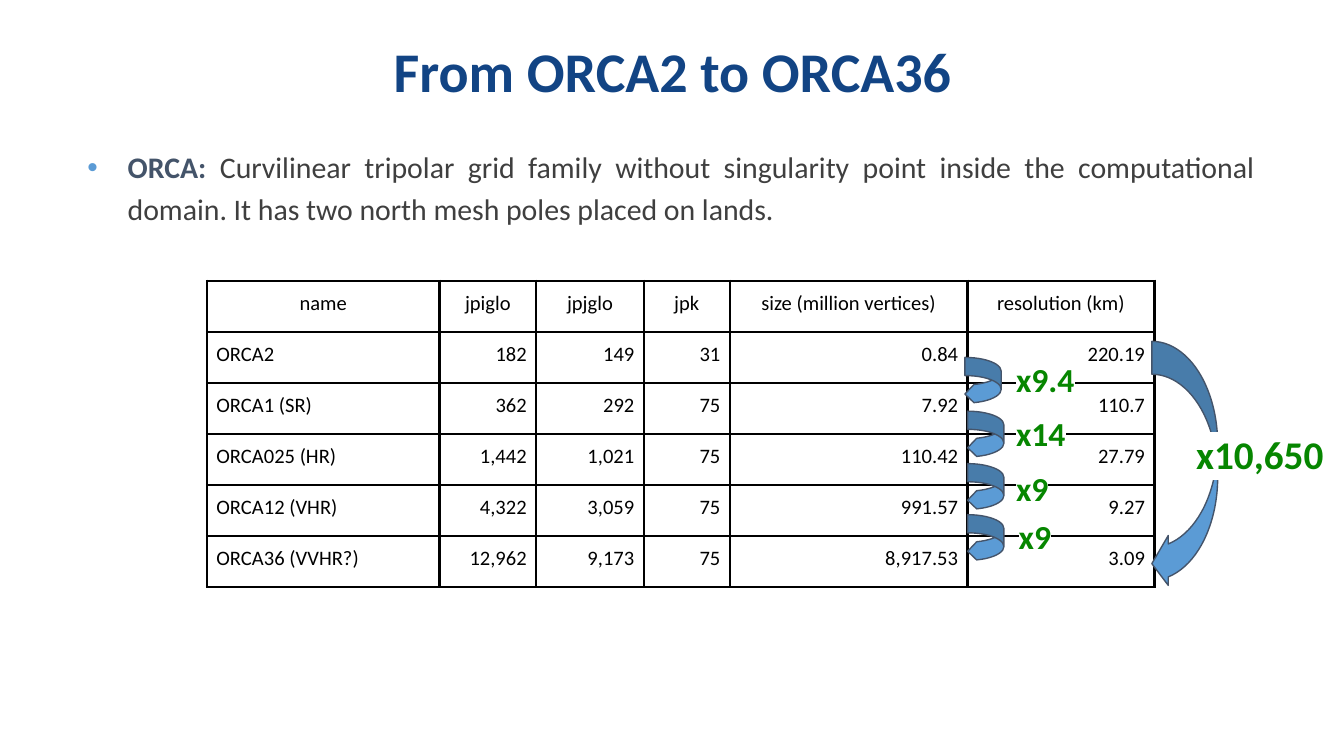
from lxml import etree
from pptx import Presentation
from pptx.dml.color import RGBColor
from pptx.enum.shapes import MSO_SHAPE
from pptx.enum.text import MSO_ANCHOR, MSO_AUTO_SIZE, PP_ALIGN
from pptx.oxml.ns import qn
from pptx.util import Inches, Pt

LEFT, CENTER, RIGHT = PP_ALIGN.LEFT, PP_ALIGN.CENTER, PP_ALIGN.RIGHT
JUSTIFY = PP_ALIGN.JUSTIFY
TOP, MIDDLE = MSO_ANCHOR.TOP, MSO_ANCHOR.MIDDLE
NO_AUTOSIZE = MSO_AUTO_SIZE.NONE
CURVED_ARROW = MSO_SHAPE.CURVED_LEFT_ARROW

NAVY = RGBColor(0x12, 0x44, 0x84)
SLATE = RGBColor(0x44, 0x54, 0x6A)
GRAY = RGBColor(0x3F, 0x3F, 0x3F)
BLUE = RGBColor(0x5B, 0x9B, 0xD5)
GREEN = RGBColor(0x06, 0x86, 0x00)
BLACK = RGBColor(0x00, 0x00, 0x00)
WHITE = RGBColor(0xFF, 0xFF, 0xFF)

COLUMNS = 100  # square grid: 100 columns across the slide width

HEADER = ["name", "jpiglo", "jpjglo", "jpk", "size (million vertices)", "resolution (km)"]
GRIDS = [
    ["ORCA2", "182", "149", "31", "0.84", "220.19"],
    ["ORCA1 (SR)", "362", "292", "75", "7.92", "110.7"],
    ["ORCA025 (HR)", "1,442", "1,021", "75", "110.42", "27.79"],
    ["ORCA12 (VHR)", "4,322", "3,059", "75", "991.57", "9.27"],
    ["ORCA36 (VVHR?)", "12,962", "9,173", "75", "8,917.53", "3.09"],
]
COLUMN_WIDTHS = [17.3, 7.2, 8, 6.4, 17.7, 13.9]
ROW_HEIGHT = 3.8

# Arrow column and row, growth factor, label column and row
STEPS = [
    (71.8, 26.6, "x9.4", 74.9, 26),
    (72, 30.6, "x14", 74.9, 30),
    (72, 34.5, "x9", 74.9, 34.1),
    (72, 38.3, "x9", 75.1, 37.7),
]


def add_child(parent, tag, **attributes):
    return etree.SubElement(parent, qn(tag), attributes)


def add_color(parent, color):
    add_child(parent, "a:srgbClr", val=str(color))


class SlideBuilder:
    font_name = "Calibri"
    inset = Inches(0.07)

    def __init__(self, deck):
        self.unit = deck.slide_width / COLUMNS
        self.page = deck.slides.add_slide(deck.slide_layouts[5])

    def grid(self, *lengths):
        return [round(length * self.unit) for length in lengths]

    def set_frame(self, frame, anchor=TOP):
        frame.word_wrap = True
        frame.auto_size = NO_AUTOSIZE
        frame.vertical_anchor = anchor
        frame.margin_left = frame.margin_right = self.inset
        frame.margin_top = frame.margin_bottom = self.inset

    def add_run(self, para, text, size, color, bold=False, highlight=None):
        span = para.add_run()
        span.text = text
        font = span.font
        font.name, font.size, font.bold = self.font_name, Pt(size), bold
        font.color.rgb = color
        if highlight is not None:
            properties = span._r.get_or_add_rPr()
            mark = etree.Element(qn("a:highlight"))
            add_color(mark, highlight)
            properties.find(qn("a:solidFill")).addnext(mark)

    def title(self, text, *place):
        box = self.page.shapes.title
        box.left, box.top, box.width, box.height = self.grid(*place)
        self.set_frame(box.text_frame, MIDDLE)
        para = box.text_frame.paragraphs[0]
        para.alignment = CENTER
        self.add_run(para, text, 30, NAVY, bold=True)

    def text_box(self, *place):
        box = self.page.shapes.add_textbox(*self.grid(*place))
        self.set_frame(box.text_frame)
        return box.text_frame.paragraphs[0]

    def bullet(self, term, text, *place):
        para = self.text_box(*place)
        properties = para._p.get_or_add_pPr()
        properties.set("marL", str(Inches(0.36)))
        properties.set("indent", str(Inches(-0.3)))
        add_color(add_child(properties, "a:buClr"), BLUE)
        add_child(properties, "a:buFont", typeface="Arial")
        add_child(properties, "a:buChar", char="•")
        para.alignment, para.line_spacing = JUSTIFY, 1.15
        self.add_run(para, term, 16, SLATE, bold=True)
        self.add_run(para, text, 16, GRAY)

    def factor(self, text, size, *place):
        self.add_run(self.text_box(*place), text, size, GREEN, bold=True, highlight=WHITE)

    def arrow(self, bend, *place):
        shape = self.page.shapes.add_shape(CURVED_ARROW, *self.grid(*place))
        shape.shadow.inherit = False
        shape.fill.solid()
        shape.fill.fore_color.rgb = BLUE
        shape.line.color.rgb = SLATE
        shape.line.width = Pt(0.75)
        for index, value in enumerate((0.5, bend, 0.25)):
            shape.adjustments[index] = value

    def set_borders(self, cell):
        properties = cell._tc.get_or_add_tcPr()
        for index, side in enumerate(("a:lnL", "a:lnR", "a:lnT", "a:lnB")):
            line = etree.Element(qn(side), w=str(Pt(1.5)))
            add_color(add_child(line, "a:solidFill"), BLACK)
            properties.insert(index, line)

    def cell(self, cell, text, alignment):
        cell.fill.background()
        cell.margin_left = cell.margin_right = self.inset
        cell.margin_top = cell.margin_bottom = self.inset
        para = cell.text_frame.paragraphs[0]
        para.alignment = alignment
        self.add_run(para, text, 11, BLACK)
        self.set_borders(cell)

    def table(self, rows, left, top):
        place = self.grid(left, top, sum(COLUMN_WIDTHS), ROW_HEIGHT * len(rows))
        table = self.page.shapes.add_table(len(rows), len(COLUMN_WIDTHS), *place).table
        table.first_row = table.horz_banding = False
        for column, width in zip(table.columns, self.grid(*COLUMN_WIDTHS)):
            column.width = width
        for row_index, values in enumerate(rows):
            table.rows[row_index].height = self.grid(ROW_HEIGHT)[0]
            for column_index, text in enumerate(values):
                body = LEFT if column_index == 0 else RIGHT
                alignment = CENTER if row_index == 0 else body
                self.cell(table.cell(row_index, column_index), text, alignment)


def main():
    deck = Presentation()
    deck.slide_width = Inches(10)
    deck.slide_height = deck.slide_width * 9 // 16
    slide = SlideBuilder(deck)

    # Heading and definition
    slide.title("From ORCA2 to ORCA36", 17.1, 1.8, 65.9, 6.9)
    slide.bullet(
        "ORCA: ",
        "Curvilinear tripolar grid family without singularity point inside the "
        "computational domain. It has two north mesh poles placed on lands.",
        5.2, 10, 88.9, 39.6,
    )

    # Grid sizes
    slide.table([HEADER] + GRIDS, 15.4, 20.9)

    # Growth from each grid to the next
    for column, row, _, _, _ in STEPS:
        slide.arrow(0.5, column, row, 2.7, 3.4)
    for _, _, text, column, row in STEPS:
        slide.factor(text, 18, column, row, 8.9, 5.3)

    # Overall growth
    slide.arrow(0.757, 85.7, 25.4, 4.9, 18.4)
    slide.factor("x10,650", 21, 88.3, 31.3, 11.7, 5.3)

    deck.save("out.pptx")


if __name__ == "__main__":
    main()
